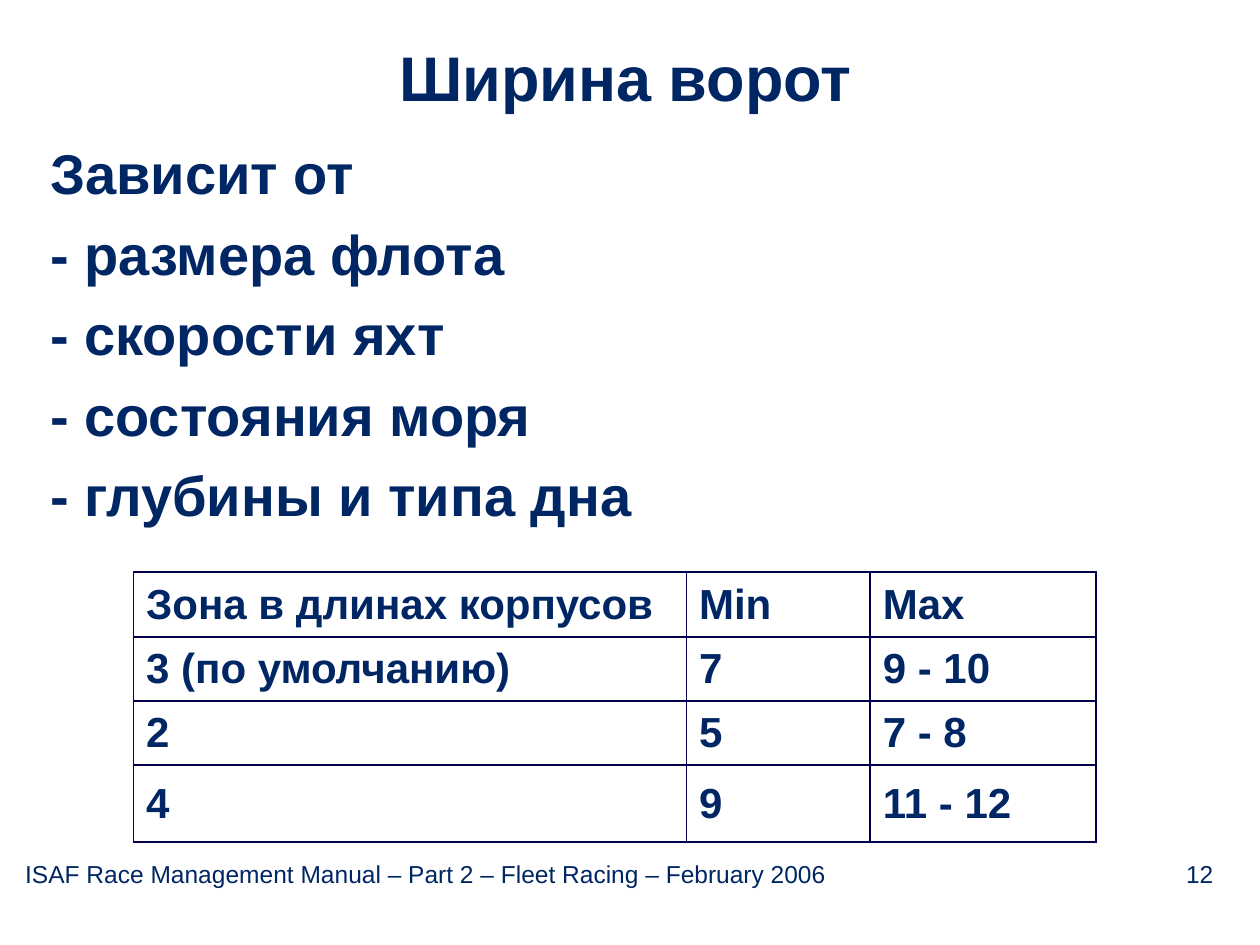
from pptx import Presentation
from pptx.dml.color import RGBColor
from pptx.enum.text import MSO_ANCHOR, PP_ALIGN
from pptx.oxml.ns import qn
from pptx.util import Pt
from lxml import etree

CENTER = PP_ALIGN.CENTER
MIDDLE = MSO_ANCHOR.MIDDLE
NAVY = "002664"
BORDER = "00004C"


def color(hex_string):
    return RGBColor.from_string(hex_string)


def add_text(paragraph, text, size, bold=True):
    run = paragraph.add_run()
    run.text = text
    run.font.name = "Arial"
    run.font.size = Pt(size)
    run.font.bold = bold
    run.font.color.rgb = color(NAVY)


prs = Presentation()
prs.slide_width, prs.slide_height = Pt(720), Pt(540)
slide = prs.slides.add_slide(prs.slide_layouts[6])
shapes = slide.shapes

# Footer with the page number at a right tab stop
footer = shapes.add_textbox(Pt(14.4), Pt(491), Pt(692), Pt(16.6)).text_frame
footer.word_wrap = True
footer.margin_left = footer.margin_right = Pt(0)
footer.margin_top = footer.margin_bottom = Pt(0)
footer_line = footer.paragraphs[0]
tab_list = etree.SubElement(footer_line._p.get_or_add_pPr(), qn("a:tabLst"))
etree.SubElement(tab_list, qn("a:tab"), pos=str(Pt(679)), algn="r")
add_text(footer_line,
         "ISAF Race Management Manual – Part 2 – Fleet Racing – February 2006\t12",
         14, bold=False)

# Title
title = shapes.add_textbox(Pt(17.3), Pt(18.7), Pt(680.4), Pt(50.4)).text_frame
title.word_wrap = True
title.vertical_anchor = MIDDLE
title.paragraphs[0].alignment = CENTER
add_text(title.paragraphs[0], "Ширина ворот", 36)

# Factors the gate width depends on
factors = shapes.add_textbox(Pt(21.6), Pt(75.6), Pt(678.2), Pt(226.8)).text_frame
factors.word_wrap = True
lines = ["Зависит от", "- размера флота", "- скорости яхт",
         "- состояния моря", "- глубины и типа дна"]
for index, line in enumerate(lines):
    paragraph = factors.add_paragraph() if index else factors.paragraphs[0]
    paragraph.space_after = Pt(7.6)
    add_text(paragraph, line, 32)

# Gate width table
widths = [316, 105, 129]
heights = [37.2, 36.6, 36.5, 43.9]
rows = [
    ["Зона в длинах корпусов", "Min", "Max"],
    ["3 (по умолчанию)", "7", "9 - 10"],
    ["2", "5", "7 - 8"],
    ["4", "9", "11 - 12"],
]
table = shapes.add_table(len(rows), len(widths), Pt(76.3), Pt(326.9),
                         Pt(sum(widths)), Pt(sum(heights))).table
table.first_row = False
table.horz_banding = False
for column, width in zip(table.columns, widths):
    column.width = Pt(width)
for row, height, values in zip(table.rows, heights, rows):
    row.height = Pt(height)
    for cell, value in zip(row.cells, values):
        cell.vertical_anchor = MIDDLE
        add_text(cell.text_frame.paragraphs[0], value, 24)
        cell_properties = cell._tc.get_or_add_tcPr()
        for side in ("a:lnL", "a:lnR", "a:lnT", "a:lnB"):
            edge = etree.SubElement(cell_properties, qn(side), w=str(Pt(1)))
            fill = etree.SubElement(edge, qn("a:solidFill"))
            etree.SubElement(fill, qn("a:srgbClr"), val=BORDER)
        cell.fill.background()

prs.save("out.pptx")
